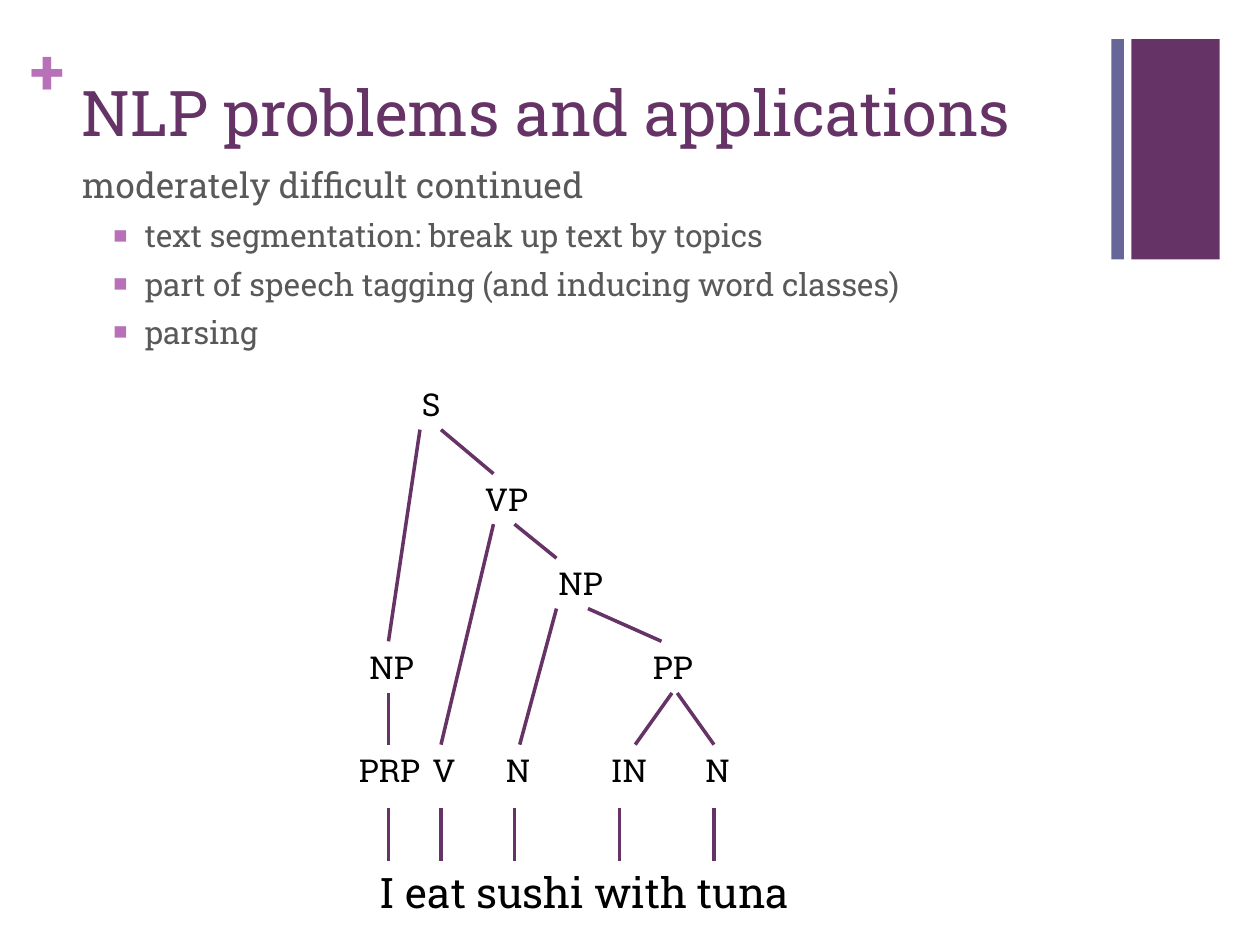
from lxml import etree
from pptx import Presentation
from pptx.dml.color import RGBColor
from pptx.enum.shapes import MSO_CONNECTOR as Connector, MSO_SHAPE as Shape
from pptx.enum.text import MSO_ANCHOR as Anchor, MSO_AUTO_SIZE as AutoSize, PP_ALIGN as Align
from pptx.oxml.ns import qn
from pptx.util import Inches, Pt

FONT = "Roboto Slab"
PLUM, SLATE, ORCHID, GREY, BLACK = "663366", "666699", "B870B8", "595959", "000000"
COLUMN = 1 / 12  # the tree stands on columns of a twelfth of an inch

# Tree rows: top of the labels, and where the branches below them start
ROWS = {
    "sentence": (3.01, 3.41),
    "verb": (3.76, 4.16),
    "object": (4.43, 4.83),
    "phrase": (5.09, 5.5),
    "tag": (5.91, 6.41),
    "words": (6.83, 7.33),
}
# Label, row, first column, columns wide
NODES = [
    ("S", "sentence", 39, 8),
    ("VP", "verb", 45, 8),
    ("NP", "object", 52, 8),
    ("NP", "phrase", 34, 13),
    ("PP", "phrase", 61, 9),
    ("PRP", "tag", 33, 11),
    ("V", "tag", 40, 13),
    ("N", "tag", 47, 5),
    ("IN", "tag", 57, 7),
    ("N", "tag", 66, 7),
]
# Parent row, column, child row, column
BRANCHES = [
    ("sentence", 40, "phrase", 37),
    ("sentence", 42, "verb", 47),
    ("verb", 47, "tag", 42),
    ("verb", 49, "object", 53),
    ("object", 53, "tag", 49.5),
    ("object", 56, "phrase", 63),
    ("phrase", 37, "tag", 37),
    ("phrase", 64, "tag", 60.5),
    ("phrase", 64.5, "tag", 68),
] + [("tag", column, "words", column) for column in (37, 42, 49, 59, 68)]


def color(hex_string):
    return RGBColor.from_string(hex_string)


def write(paragraph, text, size, ink, bold=False):
    run = paragraph.add_run()
    run.text = text
    for name, value in {"name": FONT, "size": Pt(size), "bold": bold}.items():
        setattr(run.font, name, value)
    run.font.color.rgb = color(ink)


def format_frame(frame, **extra):
    formats = {"word_wrap": True, "auto_size": AutoSize.NONE,
               "vertical_anchor": Anchor.TOP, **extra}
    for name, value in formats.items():
        setattr(frame, name, value)


def place(shape, left, top, width, height):
    box = {"left": left, "top": top, "width": width, "height": height}
    for name, value in box.items():
        setattr(shape, name, Inches(value))


def add_bar(slide, left, width, fill):
    bar = slide.shapes.add_shape(Shape.RECTANGLE, Inches(left), Inches(0.31),
                                 Inches(width), Inches(1.75))
    bar.shadow.inherit = False
    bar.fill.solid()
    bar.fill.fore_color.rgb = color(fill)
    bar.line.fill.background()


def add_label(slide, text, box, size, ink, bold=False, **extra):
    label = slide.shapes.add_textbox(*map(Inches, box))
    format_frame(label.text_frame, **extra)
    write(label.text_frame.paragraphs[0], text, size, ink, bold)


def add_node(slide, text, row, column, columns, size=18):
    top = ROWS[row][0]
    height = 0.5 if row == "words" else 0.4
    add_label(slide, text, (column * COLUMN, top, columns * COLUMN, height), size, BLACK)


def add_branch(slide, parent, start, child, end):
    branch = slide.shapes.add_connector(
        Connector.STRAIGHT, Inches(start * COLUMN), Inches(ROWS[parent][1]),
        Inches(end * COLUMN), Inches(ROWS[child][0]))
    branch.line.color.rgb = color(PLUM)
    branch.line.width = Pt(2)
    etree.SubElement(branch.element.spPr, qn("a:effectLst"))


def set_bullet(paragraph, bullet=None):
    """Give the paragraph a square bullet, or none and no indent."""
    props = paragraph._p.get_or_add_pPr()
    props.set("marL", str(Inches(0.5) if bullet else 0))
    props.set("indent", str(Inches(-0.25) if bullet else 0))
    if not bullet:
        etree.SubElement(props, qn("a:buNone"))
        return
    tint = etree.SubElement(props, qn("a:buClr"))
    etree.SubElement(tint, qn("a:srgbClr"), val=ORCHID)
    etree.SubElement(props, qn("a:buSzPct"), val="75000")
    etree.SubElement(props, qn("a:buChar"), char=bullet)


def fill_title(title, text):
    place(title, 0.55, 0.53, 8.26, 1.22)
    format_frame(title.text_frame)
    heading = title.text_frame.paragraphs[0]
    heading.alignment = Align.LEFT
    write(heading, text, 36, PLUM)


def fill_body(body, lead, points):
    place(body, 0.55, 1.25, 8.26, 2.17)
    frame = body.text_frame
    format_frame(frame)
    opening = frame.paragraphs[0]
    opening.space_before = Pt(20)
    set_bullet(opening)
    write(opening, lead, 20, GREY)
    for point in points:
        item = frame.add_paragraph()
        item.level = 1
        item.space_before = Pt(6)
        set_bullet(item, "■")
        write(item, point, 18, GREY)


def main():
    deck = Presentation()
    deck.slide_width, deck.slide_height = Inches(10), Inches(7.5)
    slide = deck.slides.add_slide(deck.slide_layouts[1])

    # Corner decoration
    add_bar(slide, 8.98, 0.7, PLUM)
    add_bar(slide, 8.82, 0.1, SLATE)
    add_label(slide, "+", (0.24, 0.25, 0.29, 0.61), 36, ORCHID, bold=True,
              margin_left=0, margin_top=0, margin_right=0, margin_bottom=0)

    # Title and list
    fill_title(slide.shapes.title, "NLP problems and applications")
    fill_body(slide.placeholders[1], "moderately difficult continued", [
        "text segmentation: break up text by topics",
        "part of speech tagging (and inducing word classes)",
        "parsing",
    ])

    # Parse tree over its sentence
    add_node(slide, "I eat sushi with tuna", "words", 35, 49, size=24)
    for node in NODES:
        add_node(slide, *node)
    for branch in BRANCHES:
        add_branch(slide, *branch)

    deck.save("out.pptx")


if __name__ == "__main__":
    main()
